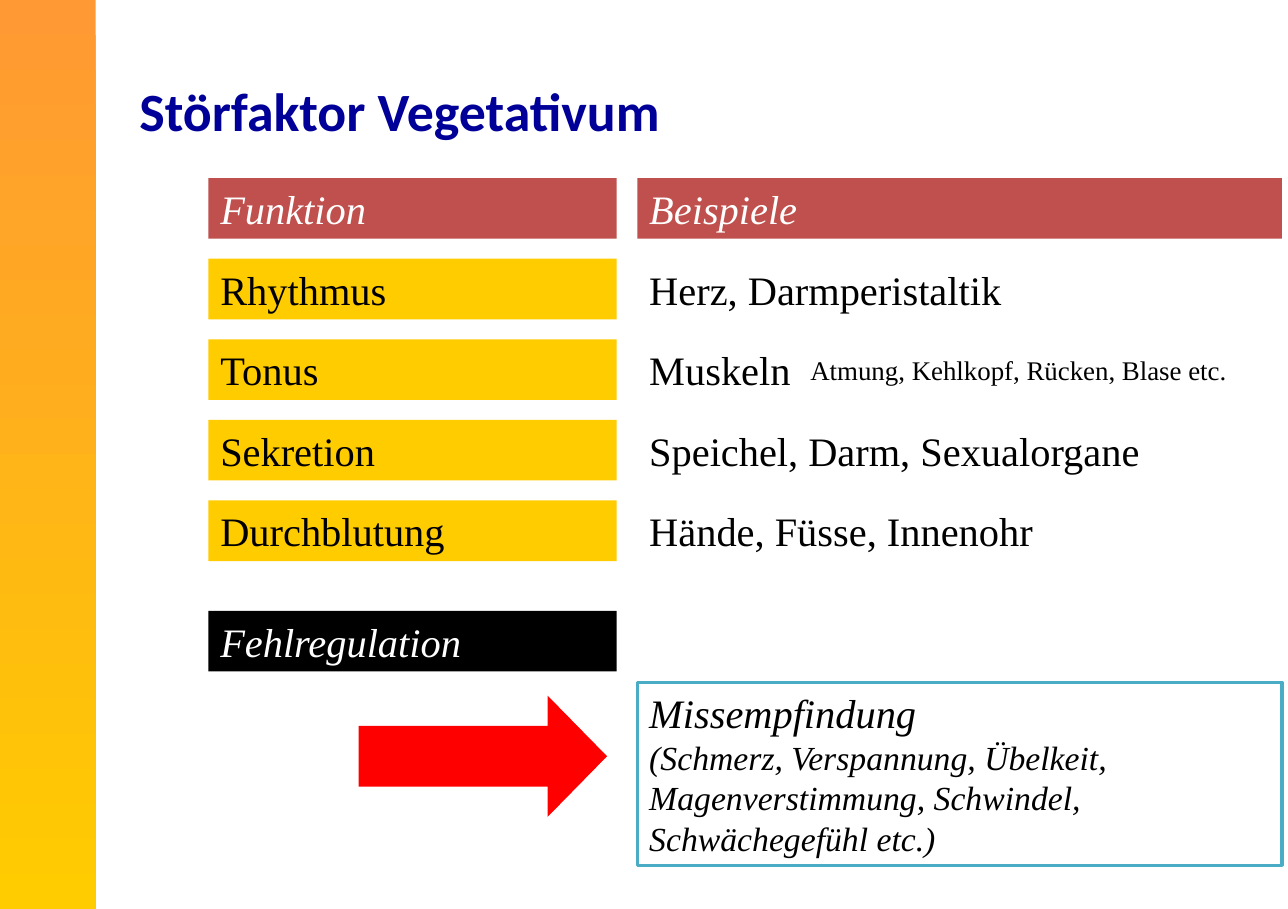
"""Build the slide on the autonomic nervous system as a disturbing factor."""
from pptx import Presentation
from pptx.dml.color import RGBColor
from pptx.enum import shapes, text
from pptx.util import Inches, Pt

ORANGE = RGBColor(0xFF, 0x99, 0x33)
YELLOW = RGBColor(0xFF, 0xCC, 0x00)
BRICK = RGBColor(0xC0, 0x50, 0x4D)
RED = RGBColor(0xFF, 0x00, 0x00)
TEAL = RGBColor(0x4B, 0xAC, 0xC6)
NAVY = RGBColor(0x00, 0x00, 0x99)
BLACK = RGBColor(0x00, 0x00, 0x00)
WHITE = RGBColor(0xFF, 0xFF, 0xFF)

FUNCTION_LEFT, FUNCTION_WIDTH = 1.72, 3.37
EXAMPLE_LEFT, EXAMPLE_WIDTH = 5.26, 5.32
TABLE_TOP, ROW_PITCH, ROW_HEIGHT = 1.47, 0.665, 0.5
ROWS = [
    ("Funktion", "Beispiele"),
    ("Rhythmus", "Herz, Darmperistaltik"),
    ("Tonus", "Muskeln"),
    ("Sekretion", "Speichel, Darm, Sexualorgane"),
    ("Durchblutung", "Hände, Füsse, Innenohr"),
]


def set_values(target, values):
    """Set each named attribute of the target."""
    for name, value in values.items():
        setattr(target, name, value)


def add_block(slide, kind, box, color=None):
    """Add a preset shape without shadow or outline."""
    shape = slide.shapes.add_shape(kind, *map(Inches, box))
    shape.shadow.inherit = False
    shape.line.fill.background()
    if color is not None:
        shape.fill.solid()
        shape.fill.fore_color.rgb = color
    return shape


def add_paragraph(paragraph, wording, color, values):
    """Write left-aligned wording with the given font values."""
    paragraph.text = wording
    paragraph.alignment = text.PP_ALIGN.LEFT
    set_values(paragraph.font, values)
    paragraph.font.color.rgb = color


def add_label(slide, box, lines, fill, color=BLACK, italic=False):
    """Add a filled rectangle holding lines of (wording, size)."""
    shape = add_block(slide, shapes.MSO_SHAPE.RECTANGLE, box, fill)
    frame = shape.text_frame
    set_values(frame, {
        "word_wrap": True,
        "vertical_anchor": text.MSO_ANCHOR.TOP,
        "auto_size": text.MSO_AUTO_SIZE.SHAPE_TO_FIT_TEXT,
    })
    for index, (wording, size) in enumerate(lines):
        paragraph = frame.add_paragraph() if index else frame.paragraphs[0]
        add_paragraph(paragraph, wording, color, {
            "name": "Times New Roman", "size": Pt(size), "italic": italic})
    return shape


def add_sidebar(slide):
    """Add the vertical gradient band at the left edge."""
    fill = add_block(slide, shapes.MSO_SHAPE.RECTANGLE, (0, 0, 0.79, 7.5)).fill
    fill.gradient()
    fill.gradient_angle = 270
    for stop, position, color in zip(fill.gradient_stops, (0, 1), (ORANGE, YELLOW)):
        stop.position = position
        stop.color.rgb = color


def format_title(slide):
    """Place and format the title."""
    title = slide.shapes.title
    set_values(title, {"left": Inches(1.05), "top": Inches(0.44),
                       "width": Inches(9.33), "height": Inches(0.94)})
    set_values(title.text_frame, {
        "word_wrap": True,
        "vertical_anchor": text.MSO_ANCHOR.MIDDLE,
        "auto_size": text.MSO_AUTO_SIZE.NONE,
    })
    add_paragraph(title.text_frame.paragraphs[0], "Störfaktor Vegetativum", NAVY,
                  {"name": "Calibri", "size": Pt(32), "bold": True})


def add_rows(slide):
    """Add the header and the rows of functions and examples."""
    for index, (function, example) in enumerate(ROWS):
        header = index == 0
        top = TABLE_TOP + index * ROW_PITCH
        color = WHITE if header else BLACK
        add_label(slide, (FUNCTION_LEFT, top, FUNCTION_WIDTH, ROW_HEIGHT),
                  [(function, 24)], BRICK if header else YELLOW, color, header)
        add_label(slide, (EXAMPLE_LEFT, top, EXAMPLE_WIDTH, ROW_HEIGHT),
                  [(example, 24)], BRICK if header else WHITE, color, header)
    add_label(slide, (6.59, 2.87, 4.04, 0.37),
              [("Atmung, Kehlkopf, Rücken, Blase etc.", 16)], WHITE)


def add_consequence(slide):
    """Add the misregulation label, its arrow and the resulting complaints."""
    add_label(slide, (FUNCTION_LEFT, 5.04, FUNCTION_WIDTH, ROW_HEIGHT),
              [("Fehlregulation", 24)], BLACK, WHITE, True)
    arrow = add_block(slide, shapes.MSO_SHAPE.RIGHT_ARROW, (2.96, 5.74, 2.05, 1), RED)
    arrow.adjustments[1] = 0.49
    complaints = add_label(
        slide, (EXAMPLE_LEFT, 5.63, EXAMPLE_WIDTH, 1.51),
        [("Missempfindung", 24),
         ("(Schmerz, Verspannung, Übelkeit, Magenverstimmung, Schwindel, "
          "Schwächegefühl etc.)", 20)], WHITE, italic=True)
    complaints.line.color.rgb = TEAL
    complaints.line.width = Pt(2)


def main():
    """Create the presentation and save it."""
    presentation = Presentation()
    set_values(presentation, {"slide_width": Inches(10.63), "slide_height": Inches(7.5)})
    slide = presentation.slides.add_slide(presentation.slide_layouts[5])
    add_sidebar(slide)
    format_title(slide)
    add_rows(slide)
    add_consequence(slide)
    presentation.save("out.pptx")


if __name__ == "__main__":
    main()
